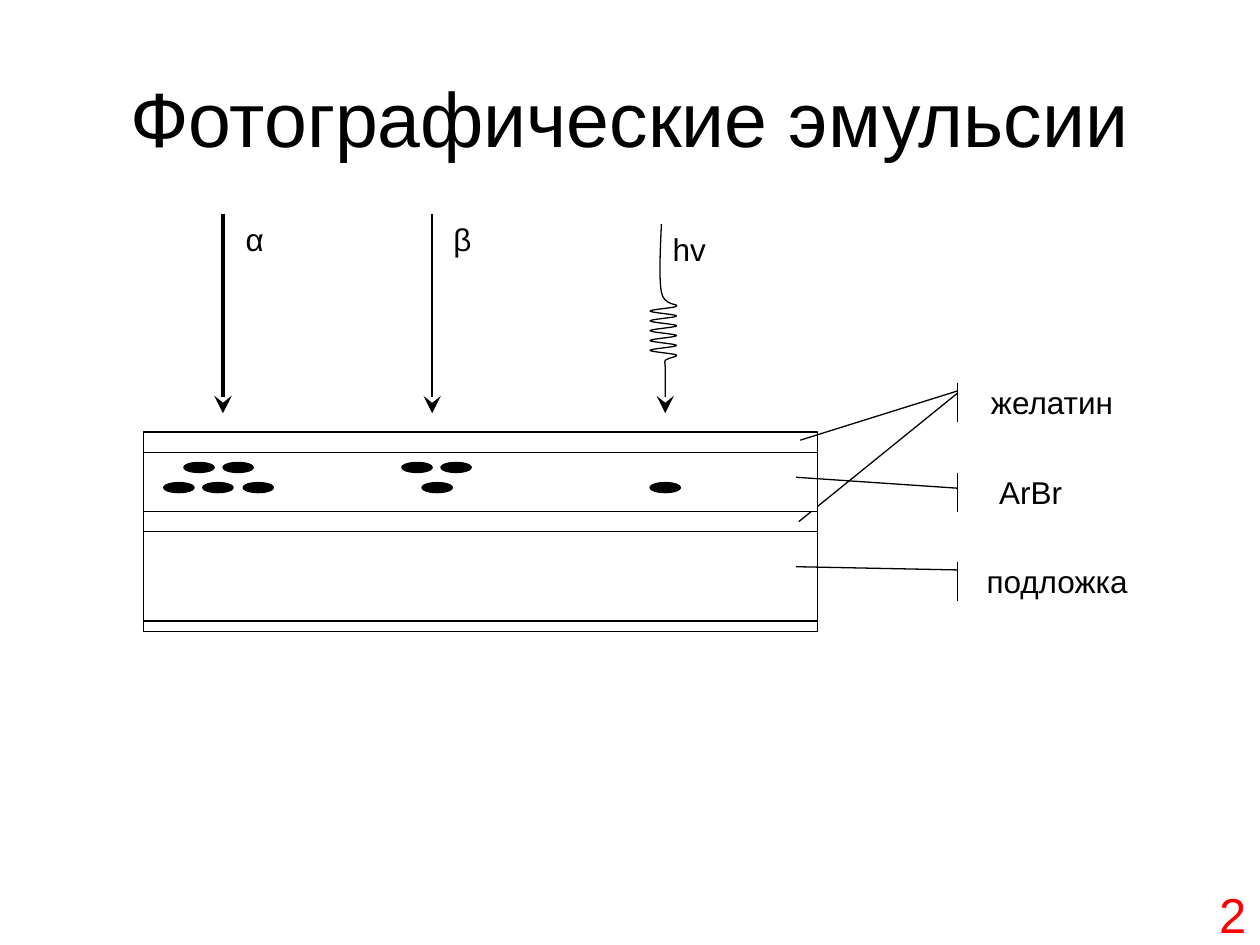
from typing import NamedTuple

import pptx
import pptx.dml.color
import pptx.enum.shapes
import pptx.enum.text
import pptx.oxml
import pptx.oxml.ns
import pptx.util
from pptx.util import Inches

BLACK = pptx.dml.color.RGBColor(0x00, 0x00, 0x00)
WHITE = pptx.dml.color.RGBColor(0xFF, 0xFF, 0xFF)
RED = pptx.dml.color.RGBColor(0xFF, 0x00, 0x00)
FONT = "Arial"
SHAPE = pptx.enum.shapes.MSO_SHAPE
ANCHOR = pptx.enum.text.MSO_ANCHOR
ALIGN = pptx.enum.text.PP_ALIGN
FIT = pptx.enum.text.MSO_AUTO_SIZE
NS = pptx.oxml.ns.nsdecls("a")

PLATE_LEFT, PLATE_WIDTH = 1.14, 5.35
GRAIN_WIDTH, GRAIN_HEIGHT = 0.24, 0.08
UPPER_ROW, LOWER_ROW = 3.67, 3.83
COIL_LEFT, COIL_RIGHT, COIL_TOP = 5.16, 5.37, 2.43
HALF_TURN, HALF_TURNS = 0.039, 10
PHOTON_TOP, PHOTON_WIDTH = 1.78, 0.24

Point = tuple[float, float]


class Layer(NamedTuple):
    top: float
    height: float


class Callout(NamedTuple):
    text: str
    top: float
    width: float
    adjustments: tuple[float, float, float, float]


class Ray(NamedTuple):
    x: float
    width: float


class Label(NamedTuple):
    text: str
    left: float
    top: float
    width: float


class Curve(NamedTuple):
    c1: Point
    c2: Point
    end: Point


GELATIN_TOP = Layer(3.43, 0.16)
EMULSION = Layer(3.59, 0.47)
GELATIN_BOTTOM = Layer(4.06, 0.16)
BASE = Layer(4.22, 0.71)
BACKING = Layer(4.93, 0.08)

GELATIN_CALLOUT = Callout("желатин", 3.04, 1.34, (0.205, -0.062, 1.463, -0.991))
BROMIDE_CALLOUT = Callout("ArBr", 3.75, 1.0, (0.402, -0.083, 0.123, -1.361))
BASE_CALLOUT = Callout("подложка", 4.46, 1.42, (0.205, -0.059, 0.122, -0.96))

GRAINS = {UPPER_ROW: (1.46, 1.77, 3.19, 3.5), LOWER_ROW: (1.3, 1.61, 1.93, 3.35, 5.16)}
RAYS = (Ray(1.77, 2), Ray(3.43, 1))
LABELS = (Label("α", 1.85, 1.7, 0.35), Label("β", 3.5, 1.7, 0.35), Label("hv", 5.24, 1.78, 0.47))


def add_run(p, text: str, size: float, color=BLACK) -> None:
    r = p.add_run()
    r.text = text
    r.font.size = pptx.util.Pt(size)
    r.font.name = FONT
    r.font.color.rgb = color


def set_line(sp, width: float = 0.75, arrow: bool = False) -> None:
    sp.line.color.rgb = BLACK
    sp.line.width = pptx.util.Pt(width)
    if arrow:
        tail = pptx.oxml.parse_xml(f'<a:tailEnd {NS} type="stealth" w="lg" len="lg"/>')
        sp.line._get_or_add_ln().append(tail)


def add_shape(shapes, kind, left: float, top: float, width: float, height: float, fill=None):
    sp = shapes.add_shape(kind, Inches(left), Inches(top), Inches(width), Inches(height))
    sp.shadow.inherit = False
    if fill is None:
        sp.fill.background()
    else:
        sp.fill.solid()
        sp.fill.fore_color.rgb = fill
    set_line(sp)
    return sp


def add_layer(shapes, layer: Layer, fill=None) -> None:
    add_shape(shapes, SHAPE.RECTANGLE, PLATE_LEFT, layer.top, PLATE_WIDTH, layer.height, fill)


def add_callout(shapes, callout: Callout) -> None:
    sp = add_shape(shapes, SHAPE.LINE_CALLOUT_1_ACCENT_BAR, 7.68, callout.top, callout.width, 0.31)
    for i, value in enumerate(callout.adjustments):
        sp.adjustments[i] = value
    tf = sp.text_frame
    tf.margin_left = tf.margin_right = tf.margin_top = tf.margin_bottom = 0
    tf.vertical_anchor = ANCHOR.TOP
    tf.word_wrap = True
    tf.auto_size = FIT.SHAPE_TO_FIT_TEXT
    p = tf.paragraphs[0]
    p.alignment = ALIGN.CENTER
    add_run(p, callout.text, 18)


def add_line(shapes, start: Point, end: Point, width: float = 0.75, arrow: bool = False) -> None:
    x1, y1, x2, y2 = (Inches(v) for v in start + end)
    cxn = shapes.add_connector(pptx.enum.shapes.MSO_CONNECTOR.STRAIGHT, x1, y1, x2, y2)
    set_line(cxn, width, arrow)
    cxn._element.spPr.append(pptx.oxml.parse_xml(f"<a:effectLst {NS}/>"))


def add_label(shapes, label: Label) -> None:
    tb = shapes.add_textbox(Inches(label.left), Inches(label.top), Inches(label.width), Inches(0.4))
    tf = tb.text_frame
    tf.word_wrap = False
    tf.auto_size = FIT.SHAPE_TO_FIT_TEXT
    add_run(tf.paragraphs[0], label.text, 18)


def photon_curves() -> list[Curve]:
    curves = [
        Curve((5.24, 2.0), (5.23, 2.21), (5.25, 2.32)),
        Curve((5.27, 2.43), (5.39, 2.41), (COIL_RIGHT, COIL_TOP)),
    ]
    bend = HALF_TURN / 3
    for i in range(1, HALF_TURNS + 1):
        x0, y0 = curves[-1].end
        x, y = COIL_LEFT if i % 2 else COIL_RIGHT, COIL_TOP + i * HALF_TURN
        curves.append(Curve((x0, y0 + bend), (x, y - bend), (x, y)))
    return curves + [
        Curve((5.39, 2.83), (5.3, 2.84), (5.28, 2.86)),
        Curve((5.27, 2.88), (5.28, 2.86), (5.28, 2.93)),
        Curve((5.28, 3.0), (5.28, 3.14), (5.28, 3.28)),
    ]


def add_photon(shapes) -> None:
    curves = photon_curves()
    builder = shapes.build_freeform(Inches(5.25), Inches(PHOTON_TOP))
    builder.add_line_segments([(Inches(x), Inches(y)) for x, y in (c.end for c in curves)], close=False)
    sp = builder.convert_to_shape()
    sp.width = Inches(PHOTON_WIDTH)
    outline = sp._element.spPr.find(".//" + pptx.oxml.ns.qn("a:path"))
    outline.set("w", str(sp.width))
    for segment, curve in zip(outline.findall(pptx.oxml.ns.qn("a:lnTo")), curves):
        pts = "".join(
            f'<a:pt x="{Inches(x - COIL_LEFT)}" y="{Inches(y - PHOTON_TOP)}"/>' for x, y in curve
        )
        outline.replace(segment, pptx.oxml.parse_xml(f"<a:cubicBezTo {NS}>{pts}</a:cubicBezTo>"))
    sp.shadow.inherit = False
    sp.fill.background()
    set_line(sp, arrow=True)


def main() -> None:
    prs = pptx.Presentation()
    prs.slide_width, prs.slide_height = Inches(10), Inches(7.5)
    s = prs.slides.add_slide(prs.slide_layouts[5])

    title = s.shapes.title
    title.left, title.top, title.width, title.height = (Inches(v) for v in (0.5, 0.3, 9, 1.25))
    title.text_frame.vertical_anchor = ANCHOR.MIDDLE
    p = title.text_frame.paragraphs[0]
    p.alignment = ALIGN.CENTER
    add_run(p, "Фотографические эмульсии", 44)

    for layer in (GELATIN_TOP, BASE, BACKING):
        add_layer(s.shapes, layer)
    add_callout(s.shapes, GELATIN_CALLOUT)
    add_line(s.shapes, (7.6, 3.12), (6.34, 4.14))
    add_layer(s.shapes, GELATIN_BOTTOM)
    add_callout(s.shapes, BASE_CALLOUT)

    emulsion = s.shapes.add_group_shape().shapes
    add_layer(emulsion, EMULSION, WHITE)
    for top, lefts in GRAINS.items():
        for left in lefts:
            add_shape(emulsion, SHAPE.OVAL, left, top, GRAIN_WIDTH, GRAIN_HEIGHT, BLACK)

    radiation = s.shapes.add_group_shape().shapes
    for ray in RAYS:
        add_line(radiation, (ray.x, 1.7), (ray.x, 3.28), ray.width, arrow=True)
    add_photon(radiation)
    for label in LABELS:
        add_label(radiation, label)
    add_callout(s.shapes, BROMIDE_CALLOUT)

    number = s.shapes.add_textbox(Inches(7.66), Inches(6.97), Inches(2.33), Inches(0.52))
    number.text_frame.word_wrap = True
    p = number.text_frame.paragraphs[0]
    p.alignment = ALIGN.RIGHT
    add_run(p, "2", 28, RED)
    prs.save("out.pptx")


if __name__ == "__main__":
    main()
